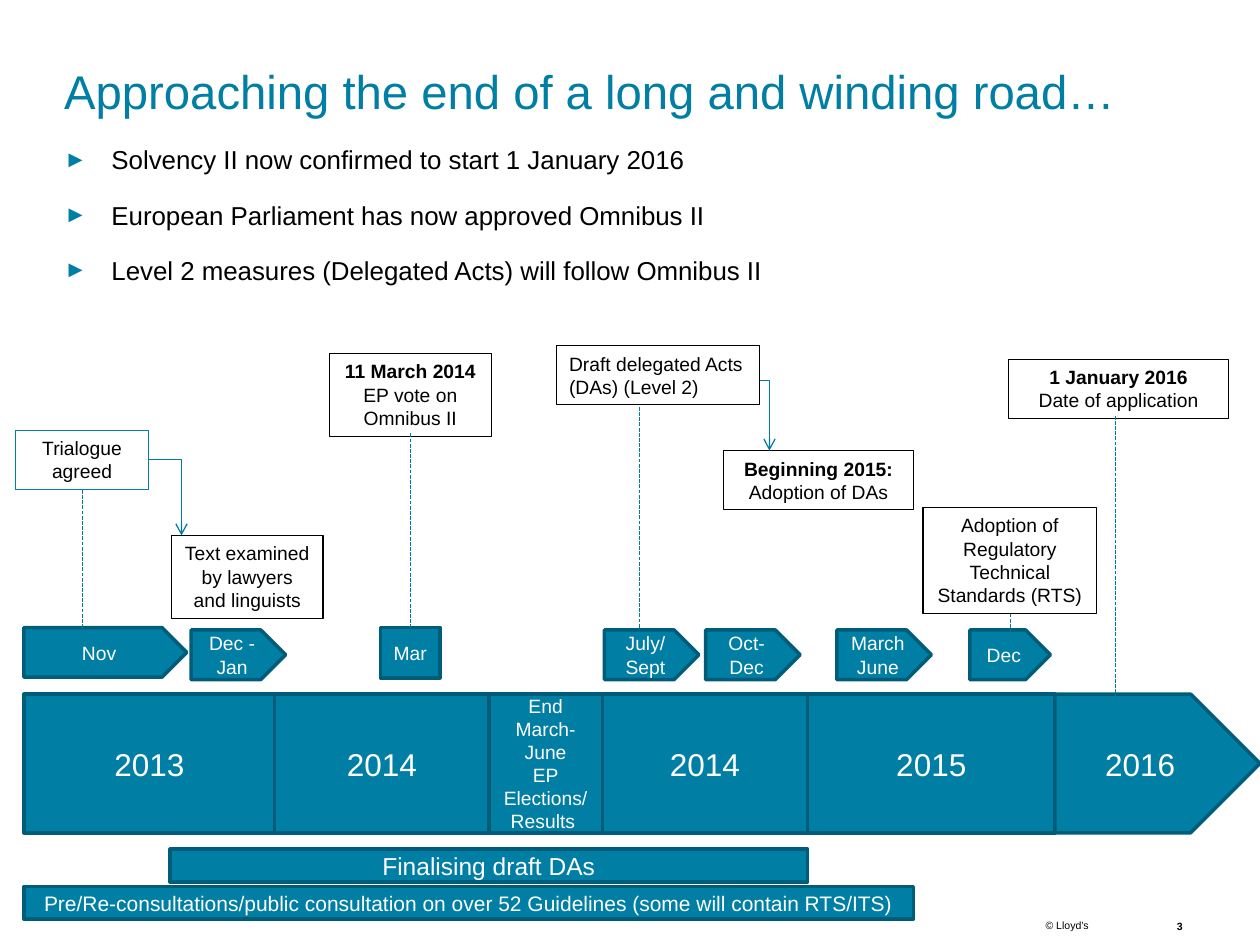
from dataclasses import dataclass
from itertools import pairwise
from typing import Optional

from lxml.etree import SubElement
from pptx import Presentation
from pptx.dml.color import RGBColor
from pptx.enum.dml import MSO_LINE_DASH_STYLE as Dash
from pptx.enum.shapes import MSO_CONNECTOR as Link, MSO_SHAPE as Preset
from pptx.enum.text import MSO_ANCHOR as Anchor, PP_ALIGN as Align
from pptx.oxml.ns import qn
from pptx.util import Pt

COLOURS = {
    "teal": "007EA3",
    "edge": "005D79",
    "link": "007B9F",
    "black": "000000",
    "white": "FFFFFF",
}
FONT = "Arial"


@dataclass
class Block:
    text: str
    left: float
    top: float
    width: float
    height: float
    size: float = 11
    preset: Preset = Preset.PENTAGON


@dataclass
class Callout:
    text: str
    left: float
    top: float
    width: float
    height: float
    heading: Optional[str] = None
    line: str = "black"
    align: Align = Align.CENTER


@dataclass
class Connection:
    start: tuple[float, float]
    end: tuple[float, float]
    bent: bool = False


YEARS = ["2013", "2014", "End March-June\nEP Elections/Results ", "2014", "2015", "2016"]
YEAR_EDGES = [13.7, 157, 279.4, 344.2, 461.5, 602.8, 720]
YEAR_TOP, YEAR_HEIGHT = 396.7, 79.2

MONTHS = [
    Block("Nov", 13.7, 358.6, 93, 28.4),
    Block("Dec - Jan", 109.2, 360, 54, 28.4),
    Block("Mar", 217.4, 358.6, 34, 28.8, preset=Preset.RECTANGLE),
    Block("July/ Sept", 345.4, 360, 54, 28.4),
    Block("Oct-Dec", 403.2, 360, 54, 28.4),
    Block("March June", 478.2, 360, 54, 28.4),
    Block("Dec", 554.2, 360, 46, 28.4),
]

WORK_BARS = [
    Block("Finalising draft DAs", 97.2, 485.3, 364.3, 18.7, 14, Preset.RECTANGLE),
    Block("Pre/Re-consultations/public consultation on over 52 Guidelines "
          "(some will contain RTS/ITS)", 13.7, 506.6, 508.3, 18.7, 12, Preset.RECTANGLE),
]

CALLOUTS = [
    Callout("Trialogue agreed", 8.8, 246, 76.3, 33.8, line="teal"),
    Callout("Text examined by lawyers and linguists", 98, 306, 86.6, 47.5),
    Callout("EP vote on Omnibus II", 188.2, 202, 92.6, 47.5, "11 March 2014"),
    Callout("Draft delegated Acts (DAs) (Level 2)", 318.1, 197.5, 116, 33.8, align=Align.LEFT),
    Callout("Adoption of DAs", 413.5, 257.5, 108.6, 33.8, "Beginning 2015:"),
    Callout("Adoption of Regulatory Technical Standards (RTS)", 527.5, 290, 99.2, 60.5),
    Callout("Date of application", 576.2, 205.4, 126, 33.8, "1 January 2016"),
]

CONNECTIONS = [
    Connection((434.2, 217.5), (439.7, 257.5), bent=True),
    Connection((85, 262.8), (103.7, 306), bent=True),
    Connection((234.6, 247.7), (234.6, 374.4)),
    Connection((47, 280), (47, 360)),
    Connection((637.4, 237.6), (637.4, 401.8)),
    Connection((577.4, 350.6), (577.4, 366.5)),
    Connection((365.3, 232.6), (365.3, 360)),
]

BULLETS = [
    "Solvency II now confirmed to start 1 January 2016",
    "European Parliament has now approved Omnibus II",
    "Level 2 measures (Delegated Acts) will follow Omnibus II",
]


def colour(name: str) -> RGBColor:
    return RGBColor.from_string(COLOURS[name])


def set_font(para, size: float, ink: str, bold: bool = False) -> None:
    font = para.font
    font.name, font.size, font.bold = FONT, Pt(size), bold
    font.color.rgb = colour(ink)


def add_outlined(page, preset: Preset, left, top, width, height, line: str, weight: float):
    shape = page.shapes.add_shape(preset, Pt(left), Pt(top), Pt(width), Pt(height))
    shape.shadow.inherit = False
    shape.line.color.rgb = colour(line)
    shape.line.width = Pt(weight)
    shape.text_frame.word_wrap = True
    return shape


def draw_block(page, block: Block) -> None:
    shape = add_outlined(page, block.preset, block.left, block.top,
                         block.width, block.height, "edge", 2)
    shape.fill.solid()
    shape.fill.fore_color.rgb = colour("teal")
    frame = shape.text_frame
    frame.vertical_anchor = Anchor.MIDDLE
    frame.text = block.text
    for para in frame.paragraphs:
        para.alignment = Align.CENTER
        set_font(para, block.size, "white")


def draw_callout(page, callout: Callout) -> None:
    shape = add_outlined(page, Preset.RECTANGLE, callout.left, callout.top,
                         callout.width, callout.height, callout.line, 0.75)
    shape.fill.background()
    frame = shape.text_frame
    frame.vertical_anchor = Anchor.TOP
    lines = [callout.heading, callout.text] if callout.heading else [callout.text]
    frame.text = "\n".join(lines)
    for para, line in zip(frame.paragraphs, lines):
        para.alignment = callout.align
        set_font(para, 11, "black", line == callout.heading)


def draw_connection(page, connection: Connection) -> None:
    kind = Link.ELBOW if connection.bent else Link.STRAIGHT
    points = [Pt(value) for value in connection.start + connection.end]
    connector = page.shapes.add_connector(kind, *points)
    connector.line.color.rgb = colour("link")
    connector.line.width = Pt(0.75)
    properties = connector._element.spPr
    if connection.bent:
        properties.find(qn("a:prstGeom")).set("prst", "bentConnector2")
        SubElement(connector.line._get_or_add_ln(), qn("a:tailEnd"), type="arrow")
    else:
        connector.line.dash_style = Dash.SQUARE_DOT
    SubElement(properties, qn("a:effectLst"))


def add_text(page, text: str, left, top, width, height, inset_top: float = 0):
    box = page.shapes.add_textbox(Pt(left), Pt(top), Pt(width), Pt(height))
    frame = box.text_frame
    frame.word_wrap = True
    frame.margin_left = frame.margin_right = frame.margin_bottom = 0
    frame.margin_top = Pt(inset_top)
    frame.text = text
    return frame.paragraphs


def add_bullet(para) -> None:
    properties = para._p.get_or_add_pPr()
    properties.set("marL", str(Pt(27)))
    properties.set("indent", str(-Pt(27)))
    tint = SubElement(properties, qn("a:buClr"))
    SubElement(tint, qn("a:srgbClr"), val=COLOURS["teal"])
    SubElement(properties, qn("a:buSzPct"), val="90000")
    SubElement(properties, qn("a:buFont"), typeface=FONT)
    SubElement(properties, qn("a:buChar"), char="►")


def draw_texts(page) -> None:
    title = add_text(page, "Approaching the end of a long and winding road…",
                     36.7, 38.9, 656, 45.4, 2.9)[0]
    title.line_spacing = 0.8
    set_font(title, 27, "teal")
    for para in add_text(page, "\n".join(BULLETS), 36.7, 80.6, 656, 95.8):
        para.line_spacing = 1.1
        para.space_after = Pt(12)
        add_bullet(para)
        set_font(para, 14.8, "black")
    footers = [("© Lloyd’s", 592.6, 524.9, 29.5, 0, False), ("3", 657.4, 522, 18.4, 3.6, True)]
    for text, left, top, width, inset, bold in footers:
        para = add_text(page, text, left, top, width, 14.4, inset)[0]
        para.alignment = Align.RIGHT
        set_font(para, 6, "black", bold)


def main() -> None:
    deck = Presentation()
    deck.slide_width, deck.slide_height = Pt(720), Pt(540)
    page = deck.slides.add_slide(deck.slide_layouts[6])
    draw_texts(page)
    for text, (left, right) in zip(YEARS, pairwise(YEAR_EDGES)):
        preset = Preset.PENTAGON if right == YEAR_EDGES[-1] else Preset.RECTANGLE
        size = 18 if text.isdigit() else 11
        draw_block(page, Block(text, left, YEAR_TOP, right - left, YEAR_HEIGHT, size, preset))
    for block in MONTHS + WORK_BARS:
        draw_block(page, block)
    for callout in CALLOUTS:
        draw_callout(page, callout)
    for connection in CONNECTIONS:
        draw_connection(page, connection)
    deck.save("out.pptx")


if __name__ == "__main__":
    main()
